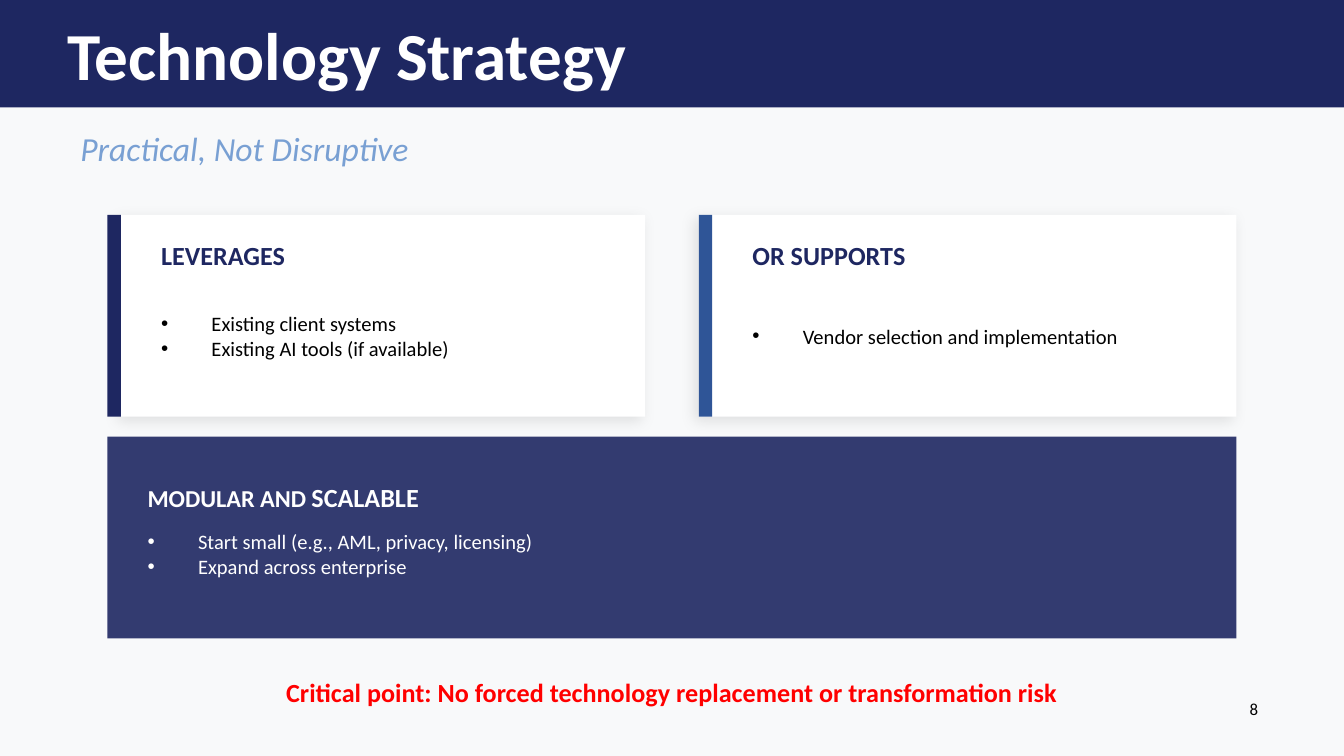
"""Build the Technology Strategy slide."""
from lxml import etree
from pptx import Presentation
from pptx.dml.color import RGBColor
from pptx.enum import shapes, text
from pptx.oxml import ns
from pptx.util import Inches, Pt

HUES = {"navy": "1E2761", "blue": "2F5597", "sky": "79A0D3", "pale": "F8F9FA",
        "white": "FFFFFF", "black": "000000", "red": "FF0000"}


def block(left, top, width, height, hue):
    box = slide.shapes.add_shape(shapes.MSO_SHAPE.RECTANGLE, Inches(left), Inches(top),
                                 Inches(width), Inches(height))
    box.shadow.inherit = False
    box.fill.solid()
    box.fill.fore_color.rgb = RGBColor.from_string(HUES[hue])
    box.line.fill.background()
    return box


def label(left, top, width, height, lines, size, hue, bold=False, bullet=False):
    box = slide.shapes.add_textbox(Inches(left), Inches(top), Inches(width), Inches(height))
    frame = box.text_frame
    frame.word_wrap = True
    frame.vertical_anchor = text.MSO_ANCHOR.MIDDLE
    frame.text = "\n".join(lines)
    for para in frame.paragraphs:
        if bullet:
            props = para._p.get_or_add_pPr()
            props.set("marL", str(Pt(27)))
            props.set("indent", str(Pt(-27)))
            etree.SubElement(props, ns.qn("a:buFont"), typeface="Arial")
            etree.SubElement(props, ns.qn("a:buChar"), char="•")
        for run in para.runs:
            run.font.name = "Calibri"
            run.font.size = Pt(size)
            run.font.bold = bold
            run.font.color.rgb = RGBColor.from_string(HUES[hue])
    return frame


deck = Presentation()
deck.slide_width = Inches(10)
deck.slide_height = Inches(10) * 9 // 16
slide = deck.slides.add_slide(deck.slide_layouts[6])
slide.background.fill.solid()
slide.background.fill.fore_color.rgb = RGBColor.from_string(HUES["pale"])

block(0, 0, 10, 0.8, "navy")
title = label(0.5, 0.2, 9, 0.4, ["Technology Strategy"], 36, "white", bold=True)
title.margin_left = title.margin_right = title.margin_top = title.margin_bottom = 0
motto = label(0.5, 0.95, 9, 0.3, ["Practical, Not Disruptive"], 18, "sky")
motto.paragraphs[0].runs[0].font.italic = True

cards = [
    (0.8, 0.1, "navy", "LEVERAGES", 2.65, 2.65,
     ["Existing client systems", "Existing AI tools (if available)"]),
    (5.2, 0, "blue", "OR SUPPORTS", 2.4, 2.95, ["Vendor selection and implementation"]),
]
for left, inset, hue, head, wide, span, items in cards:
    card = block(left + inset, 1.6, 4 - inset, 1.5, "white")
    glow = etree.SubElement(card._element.spPr.find(ns.qn("a:effectLst")), ns.qn("a:outerShdw"),
                            blurRad=str(Pt(8)), dist=str(Pt(3)), dir=str(135 * 60000),
                            algn="bl", rotWithShape="0")
    tint = etree.SubElement(glow, ns.qn("a:srgbClr"), val=HUES["black"])
    etree.SubElement(tint, ns.qn("a:alpha"), val="10000")
    block(left, 1.6, 0.1, 1.5, hue)
    label(left + 0.3, 1.75, wide, 0.3, [head], 14, "navy", bold=True)
    label(left + 0.3, 2.1, span, 0.8, items, 11, "black", bullet=True)

point = label(1.7, 5, 6.6, 0.3,
              ["Critical point: No forced technology replacement or transformation risk"],
              14, "red", bold=True)
point.paragraphs[0].alignment = text.PP_ALIGN.CENTER

panel = block(0.8, 3.25, 8.4, 1.5, "navy")
tint = panel._element.spPr.find(ns.qn("a:solidFill")).find(ns.qn("a:srgbClr"))
etree.SubElement(tint, ns.qn("a:alpha"), val="90000")
head = label(1, 3.57, 8, 0.25, ["MODULAR AND "], 13, "white", bold=True)
run = head.paragraphs[0].add_run()
run.text = "SCALABLE"
run.font.name = "Calibri"
run.font.size = Pt(14)
run.font.bold = True
run.font.color.rgb = RGBColor.from_string(HUES["white"])
label(1, 3.87, 8, 0.5, ["Start small (e.g., AML, privacy, licensing)", "Expand across enterprise"],
      11, "white", bullet=True)

page = label(9.2, 5.15, 0.47, 0.35, ["8"], 9, "black")
page.vertical_anchor = text.MSO_ANCHOR.TOP

deck.save("out.pptx")
